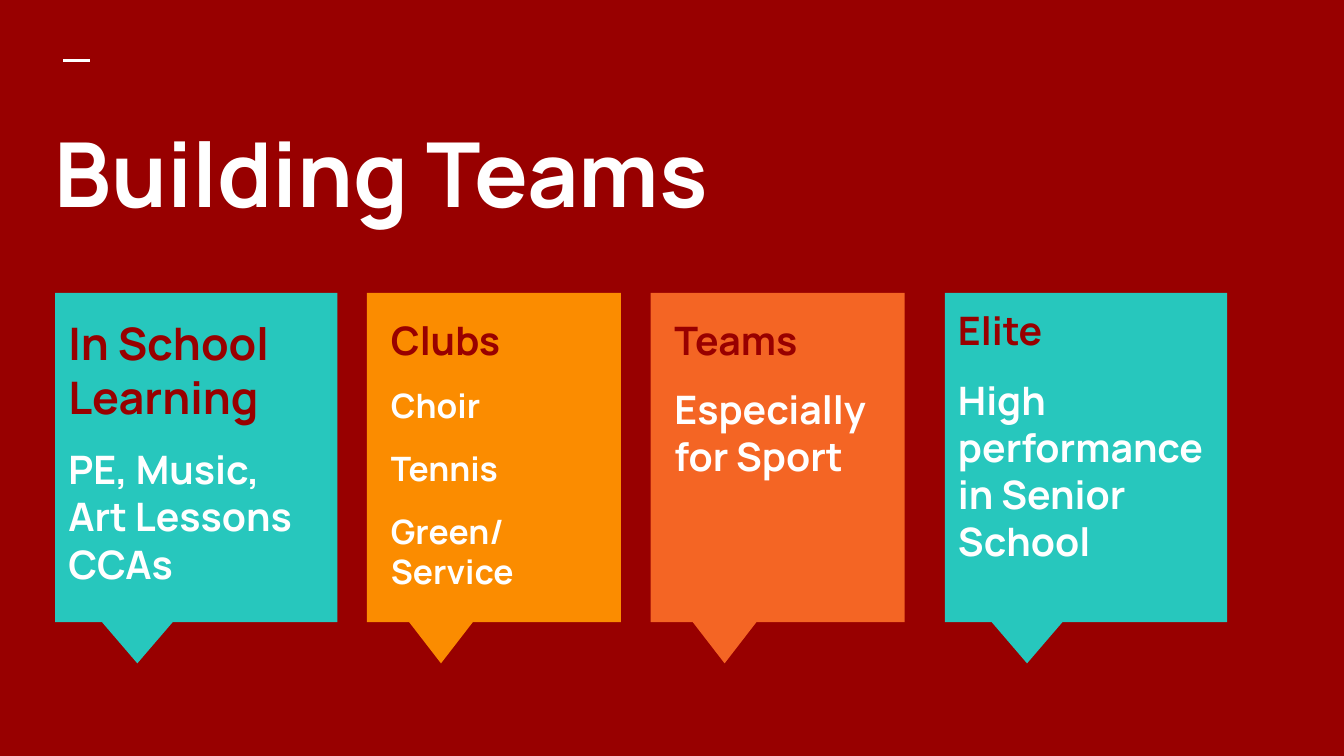
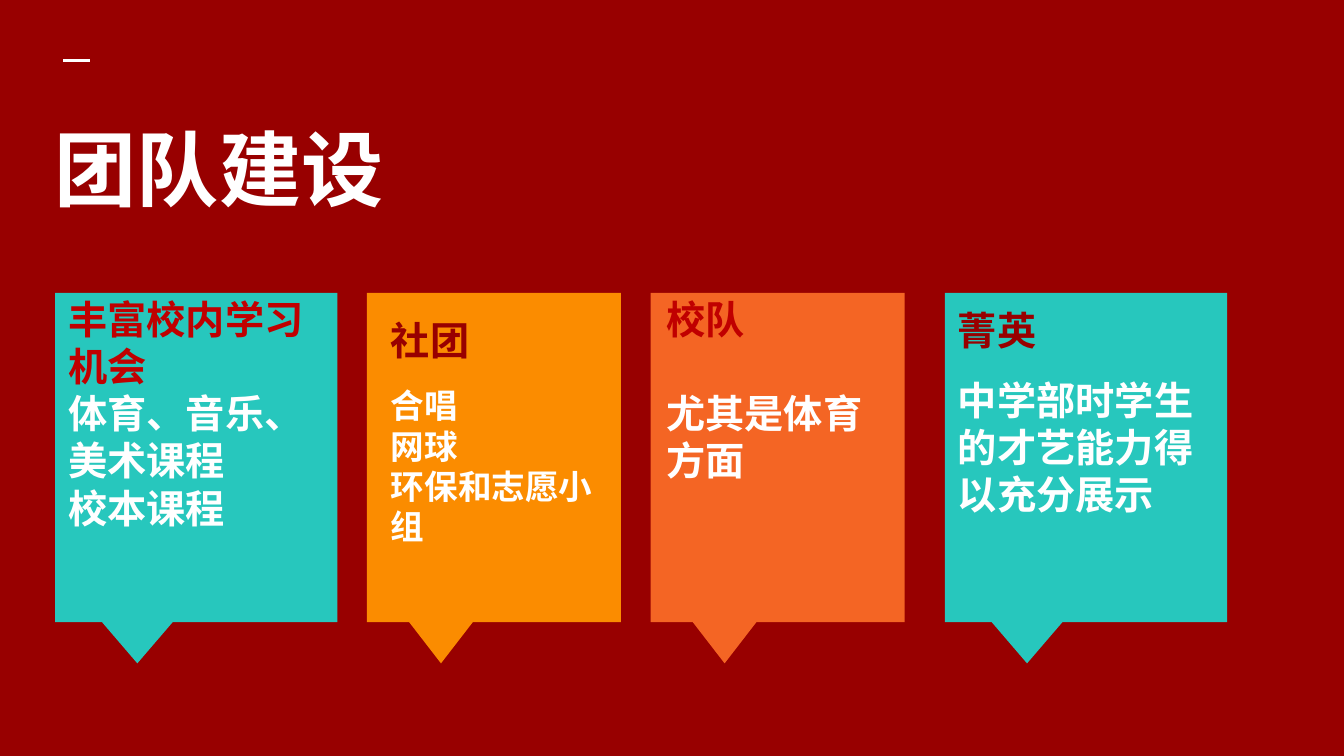
from lxml.etree import SubElement
from pptx import Presentation
from pptx.dml.color import RGBColor
from pptx.enum.shapes import MSO_CONNECTOR, MSO_SHAPE
from pptx.enum.text import MSO_ANCHOR
from pptx.oxml.ns import qn
from pptx.util import Inches, Pt

MAROON = RGBColor(0x98, 0x00, 0x00)
RED = RGBColor(0xC0, 0x00, 0x00)
WHITE = RGBColor(0xFF, 0xFF, 0xFF)
TEAL = RGBColor(0x27, 0xC7, 0xBD)
AMBER = RGBColor(0xFB, 0x8C, 0x00)
ORANGE = RGBColor(0xF4, 0x65, 0x24)
FONT = "Manrope"

SLIDE_WIDTH = 10
SLIDE_HEIGHT = SLIDE_WIDTH * 9 / 16
CARD_TOP, CARD_HEIGHT, TEXT_HEIGHT = 2.18, 2.45, 2.19
WIDE, NARROW = 2.1, 1.89
NARROW_TEXT = 1.72
# left, width, fill
CARDS = [
    (0.41, WIDE, TEAL),
    (2.73, NARROW, AMBER),
    (4.84, NARROW, ORANGE),
    (7.03, WIDE, TEAL),
]

# Each card: text left, text top, paragraphs of (text, size, colour, space before)
SLIDES = [
    ("Building Teams", 48, [
        (0.41, 2.25, [("In School Learning", 24, MAROON, 0),
                      ("PE, Music, Art Lessons\nCCAs", 21, WHITE, 12)]),
        (2.81, 2.25, [("Clubs", 21, MAROON, 0),
                      ("Choir", 18, WHITE, 12),
                      ("Tennis", 18, WHITE, 12),
                      ("Green/ Service", 18, WHITE, 12)]),
        (4.92, 2.25, [("Teams", 21, MAROON, 0),
                      ("Especially for Sport", 21, WHITE, 12)]),
        (7.03, 2.18, [("Elite", 21, MAROON, 0),
                      ("High performance in Senior School", 21, WHITE, 12)]),
    ]),
    ("团队建设", 44, [
        (0.41, 2.1, [("丰富校内学习机会", 21, RED, 0),
                     ("体育、音乐、美术课程\n校本课程", 21, WHITE, 0)]),
        (2.81, 2.25, [("社团", 21, MAROON, 0),
                      ("合唱\n网球\n环保和志愿小组", 18, WHITE, 12)]),
        (4.86, 2.1, [("校队", 21, RED, 0),
                     ("尤其是体育方面", 21, WHITE, 25)]),
        (7.03, 2.18, [("菁英", 21, MAROON, 0),
                      ("中学部时学生的才艺能力得以充分展示", 21, WHITE, 12)]),
    ]),
]


def add_text(slide, left, top, width, height, paragraphs):
    box = slide.shapes.add_textbox(Inches(left), Inches(top), Inches(width), Inches(height))
    frame = box.text_frame
    frame_format = {"word_wrap": True, "vertical_anchor": MSO_ANCHOR.TOP}
    frame_format.update({f"margin_{side}": Inches(0.1) for side in ("left", "top", "right", "bottom")})
    for name, value in frame_format.items():
        setattr(frame, name, value)
    for index, (text, size, colour, space_before) in enumerate(paragraphs):
        paragraph = frame.add_paragraph() if index else frame.paragraphs[0]
        paragraph.text = text.replace("\n", "\v")
        if space_before:
            paragraph.space_before = Pt(space_before)
        for run in paragraph.runs:
            for name, value in {"name": FONT, "size": Pt(size), "bold": True}.items():
                setattr(run.font, name, value)
            run.font.color.rgb = colour
            # East Asian text uses the same typeface
            SubElement(run._r.get_or_add_rPr(), qn("a:ea"), typeface=FONT)


presentation = Presentation()
presentation.slide_width = Inches(SLIDE_WIDTH)
presentation.slide_height = Inches(SLIDE_HEIGHT)
blank_layout = presentation.slide_layouts[6]

for title, title_size, card_texts in SLIDES:
    slide = presentation.slides.add_slide(blank_layout)
    slide.background.fill.solid()
    slide.background.fill.fore_color.rgb = MAROON

    dash = slide.shapes.add_connector(
        MSO_CONNECTOR.STRAIGHT, Inches(0.47), Inches(0.45), Inches(0.67), Inches(0.45))
    dash.line.color.rgb = WHITE
    dash.line.width = Pt(1.5)
    SubElement(dash._element.spPr, qn("a:effectLst"))

    add_text(slide, 0.31, 0.78, 9.43, 1.12, [(title, title_size, WHITE, 0)])

    for (left, width, fill), (text_left, text_top, paragraphs) in zip(CARDS, card_texts):
        callout = slide.shapes.add_shape(
            MSO_SHAPE.RECTANGULAR_CALLOUT,
            Inches(left), Inches(CARD_TOP), Inches(width), Inches(CARD_HEIGHT))
        callout.adjustments[0] = -5 / 24
        callout.adjustments[1] = 5 / 8
        callout.shadow.inherit = False
        callout.fill.solid()
        callout.fill.fore_color.rgb = fill
        callout.line.fill.background()
        text_width = WIDE if width == WIDE else NARROW_TEXT
        add_text(slide, text_left, text_top, text_width, TEXT_HEIGHT, paragraphs)

presentation.save("out.pptx")
